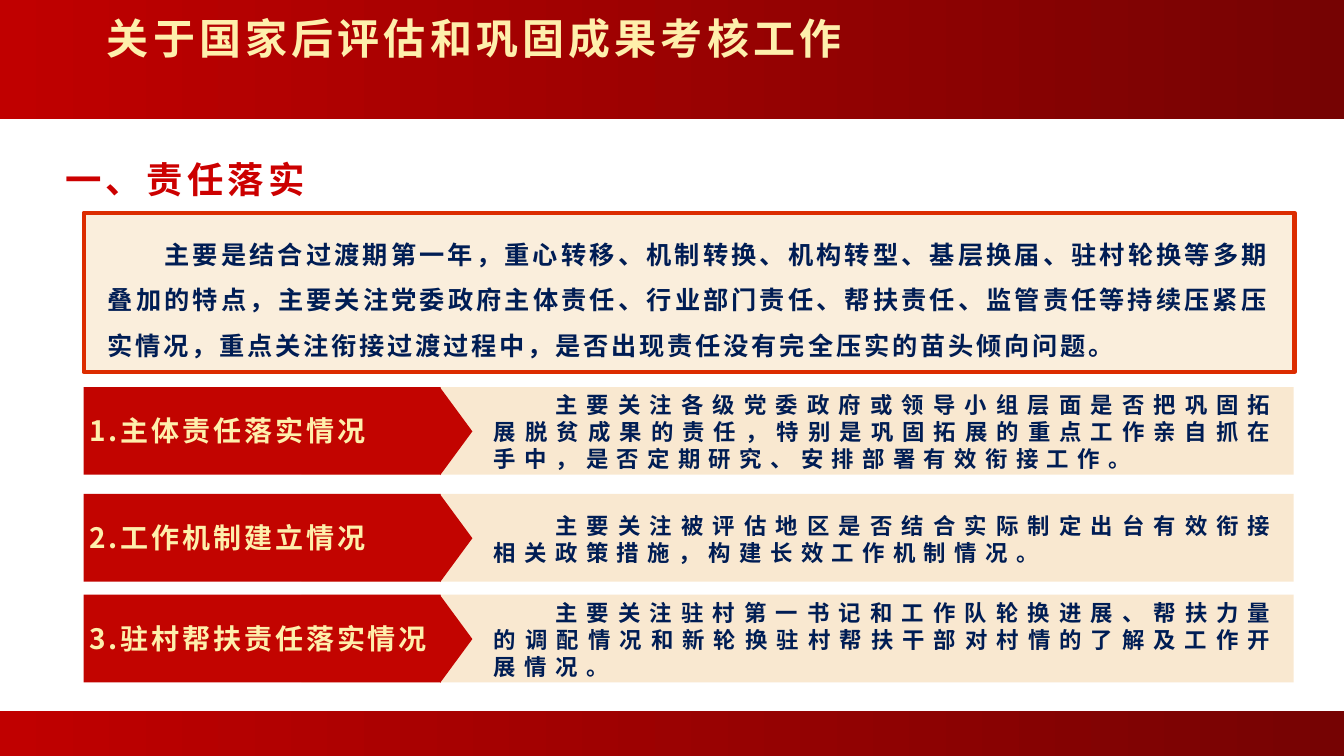
from dataclasses import dataclass

from lxml import etree
from pptx import Presentation
from pptx import util as u
from pptx.dml.color import RGBColor
from pptx.enum import shapes, text
from pptx.oxml.ns import qn
from pptx.util import Inches


@dataclass(frozen=True)
class Theme:
    font: str = "Noto Sans CJK SC"
    # Colours; gradients are (position, colour) stops
    band: tuple = ((0, "C00000"), (1, "760303"))
    gold: tuple = ((0.49, "FEEFAC"), (1, "E9BE61"))
    heading: str = "CC0000"
    navy: str = "001D54"
    red: str = "C20400"
    cream: str = "F9E8D0"
    intro: str = "FAEEDC"
    border: str = "DC2C00"
    # Type sizes
    title_size: int = 30
    heading_size: int = 26
    label_size: int = 20
    intro_size: int = 18
    detail_size: int = 16


THEME = Theme()
JUSTIFY = text.PP_ALIGN.JUSTIFY

TITLE = "关于国家后评估和巩固成果考核工作"
HEADING = "一、责任落实"
INTRO = ("主要是结合过渡期第一年，重心转移、机制转换、机构转型、基层换届、驻村轮换等多期叠加的特点，"
         "主要关注党委政府主体责任、行业部门责任、帮扶责任、监管责任等持续压紧压实情况，"
         "重点关注衔接过渡过程中，是否出现责任没有完全压实的苗头倾向问题。")
# Top, label width, label, detail
ROWS = [
    (3.84, 3.03, "1.主体责任落实情况",
     "主要关注各级党委政府或领导小组层面是否把巩固拓展脱贫成果的责任，"
     "特别是巩固拓展的重点工作亲自抓在手中，是否定期研究、安排部署有效衔接工作。"),
    (4.9, 3.03, "2.工作机制建立情况",
     "主要关注被评估地区是否结合实际制定出台有效衔接相关政策措施，构建长效工作机制情况。"),
    (5.9, 3.62, "3.驻村帮扶责任落实情况",
     "主要关注驻村第一书记和工作队轮换进展、帮扶力量的调配情况和"
     "新轮换驻村帮扶干部对村情的了解及工作开展情况。"),
]


def paint(fill, color, angle=0):
    """Fill with one colour, or with a gradient when given stops."""
    if isinstance(color, str):
        fill.solid()
        fill.fore_color.rgb = RGBColor.from_string(color)
        return
    fill.gradient()
    fill.gradient_angle = angle
    for stop, (position, rgb) in zip(fill.gradient_stops, color):
        stop.position = position
        stop.color.rgb = RGBColor.from_string(rgb)


def write(sp, content, size, color, spacing, align=text.PP_ALIGN.LEFT, indent=0,
          line=None, insets=(0.1, 0.05, 0.1, 0.05), wrap=True,
          fit=text.MSO_AUTO_SIZE.NONE):
    """Put one formatted paragraph into a shape."""
    tf = sp.text_frame
    tf.word_wrap, tf.auto_size = wrap, fit
    tf.vertical_anchor = text.MSO_ANCHOR.MIDDLE
    (tf.margin_left, tf.margin_top,
     tf.margin_right, tf.margin_bottom) = map(Inches, insets)
    p = tf.paragraphs[0]
    p.alignment = align
    if line:
        p.line_spacing = line
    if indent:
        p._p.get_or_add_pPr().set("indent", str(Inches(indent)))
    r = p.add_run()
    r.text = content
    r.font.size, r.font.bold, r.font.name = u.Pt(size), True, THEME.font
    paint(r.font.fill, color, angle=270)
    # East Asian typeface and letter spacing
    props = r._r.get_or_add_rPr()
    props.set("spc", str(spacing * 100))
    etree.SubElement(props, qn("a:ea")).set("typeface", THEME.font)


def add_block(parent, box, color, kind=shapes.MSO_SHAPE.RECTANGLE, rotation=0):
    sp = parent.add_shape(kind, *map(Inches, box))
    sp.shadow.inherit = False
    sp.rotation = rotation
    paint(sp.fill, color)
    sp.line.fill.background()
    return sp


def add_text(parent, box, content, **style):
    write(parent.add_textbox(*map(Inches, box)), content, **style)


def add_bands(s):
    """Header and footer bands, behind everything else."""
    for index, (top, height) in enumerate([(0, 1.18), (7.05, 0.47)]):
        band = add_block(s.shapes, (0, top, 13.35, height), THEME.band)
        s.shapes._spTree.insert(2 + index, band._element)


def add_title(s):
    title = s.shapes.title
    title.left, title.top, title.width, title.height = map(
        Inches, (0.47, 0.08, 10.63, 0.58))
    write(title, TITLE, size=THEME.title_size, color=THEME.gold, spacing=3,
          align=JUSTIFY, insets=(0.59, 0.04, 0.08, 0.04))


def add_intro(s):
    panel = add_block(s.shapes, (0.83, 2.11, 12.01, 1.58), THEME.intro)
    paint(panel.line.fill, THEME.border)
    panel.line.width = u.Pt(3)
    write(panel, INTRO, size=THEME.intro_size, color=THEME.navy, spacing=2,
          align=JUSTIFY, indent=0.56, line=1.5, insets=(0.24, 0.2, 0.24, 0.2))


def add_row(s, top, label_width, label, detail):
    """Red label with a pointer, and its explanation on cream."""
    row = s.shapes.add_group_shape().shapes
    add_block(row, (2.99, top, 9.84, 0.87), THEME.cream)
    add_block(row, (0.83, top, 3.54, 0.87), THEME.red)
    add_block(row, (4.09, top + 0.28, 0.87, 0.32), THEME.red,
              kind=shapes.MSO_SHAPE.ISOSCELES_TRIANGLE, rotation=90)
    add_text(row, (0.79, top + 0.04, label_width, 0.78), label,
             size=THEME.label_size, color=THEME.gold, spacing=2)
    add_text(row, (4.8, top + 0.01, 7.99, 0.87), detail,
             size=THEME.detail_size, color=THEME.navy, spacing=6,
             align=JUSTIFY, indent=0.61, insets=(0.1, 0.04, 0.1, 0.04))


def main():
    prs = Presentation()
    prs.slide_width, prs.slide_height = Inches(13.33), Inches(7.5)
    s = prs.slides.add_slide(prs.slide_layouts[5])

    # Frame and headings
    add_bands(s)
    add_title(s)
    add_text(s.shapes, (0.55, 1.42, 2.62, 0.62), HEADING,
             size=THEME.heading_size, color=THEME.heading, spacing=3, line=1.2,
             wrap=False, fit=text.MSO_AUTO_SIZE.SHAPE_TO_FIT_TEXT)

    # Content
    for row in ROWS:
        add_row(s, *row)
    add_intro(s)
    prs.save("out.pptx")


if __name__ == "__main__":
    main()
